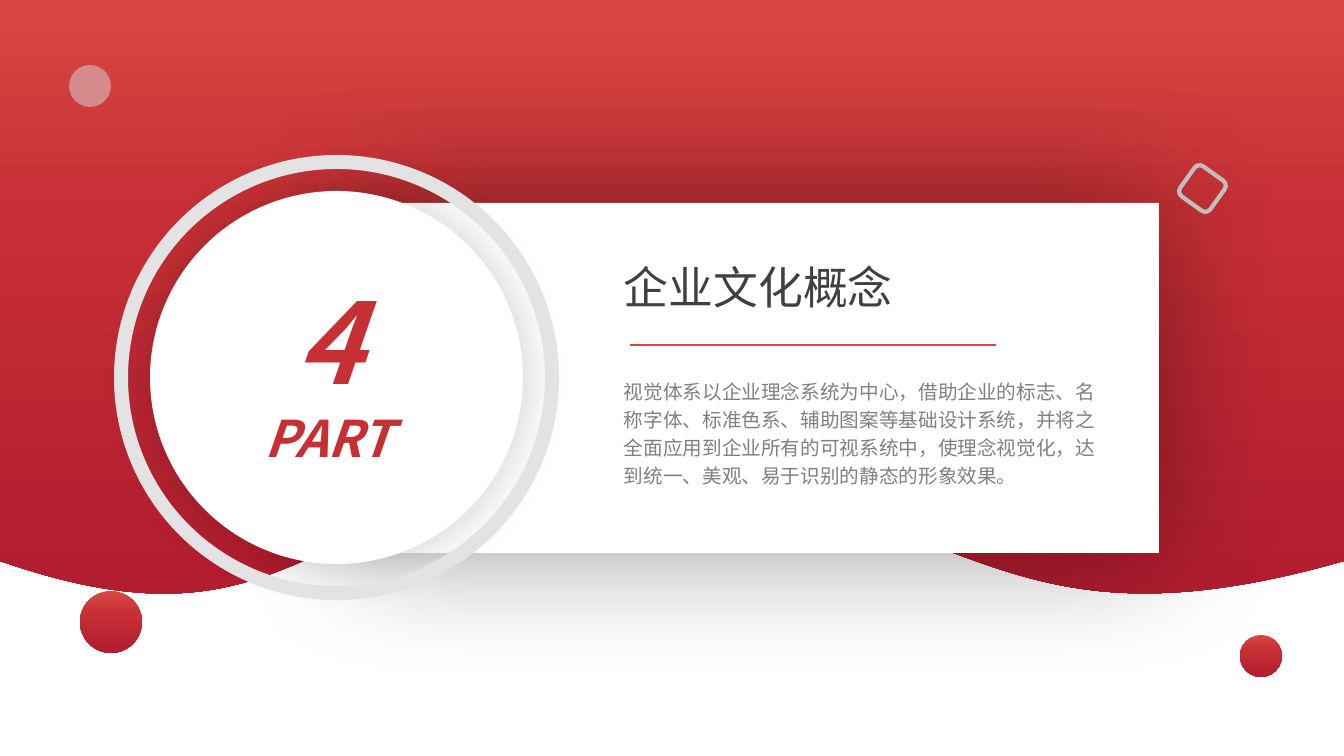
from dataclasses import dataclass

from lxml import etree
from pptx import Presentation, util as u
from pptx.dml.color import RGBColor
from pptx.enum import shapes, text
from pptx.oxml.ns import qn

SLIDE_W, SLIDE_H = 1344, 756
EMU_PER_PX = 12192000 / SLIDE_W


@dataclass(frozen=True)
class Theme:
    font: str = "Noto Sans CJK SC"
    white: str = "FFFFFF"
    ring: str = "E3E3E3"
    outline: str = "BFBFBF"
    dot: str = "D9D9D9"
    rule: str = "D84743"
    title: str = "404040"
    body: str = "808080"
    reds: tuple = ((0, "D84744"), (37, "C62F34"), (100, "B21D30"))
    number_size: int = 80
    part_size: int = 36
    title_size: int = 32
    body_size: int = 14


THEME = Theme()


def px(length):
    return u.Emu(round(length * EMU_PER_PX))


def node(parent, tag, **attrs):
    return etree.SubElement(parent, qn(tag), {k: str(v) for k, v in attrs.items()})


def paint_reds(fill, element):
    """Vertical red gradient for a shape or a run of text."""
    fill.gradient()
    fill.gradient_angle = 270
    stops = next(element.iter(qn("a:gsLst")))
    stops.clear()
    for percent, color in THEME.reds:
        node(node(stops, "a:gs", pos=percent * 1000), "a:srgbClr", val=color)


def paint(shape, fill=None, line=None, width=0, alpha=None, shadow=None):
    """Fill is a colour, the theme's gradient stops or None; shadow is (opacity, blur pt)."""
    shape.shadow.inherit = False
    if fill is THEME.reds:
        paint_reds(shape.fill, shape._element.spPr)
    elif fill:
        shape.fill.solid()
        shape.fill.fore_color.rgb = RGBColor.from_string(fill)
    else:
        shape.fill.background()
    if alpha:
        color = next(shape._element.spPr.iter(qn("a:srgbClr")))
        node(color, "a:alpha", val=alpha * 1000)
    if line:
        shape.line.color.rgb = RGBColor.from_string(line)
        shape.line.width = u.Pt(width)
    else:
        shape.line.fill.background()
    if shadow:
        opacity, blur = shadow
        effects = shape._element.spPr.find(qn("a:effectLst"))
        outer = node(effects, "a:outerShdw", blurRad=u.Pt(blur), dist=0,
                     algn="ctr", rotWithShape=0)
        node(node(outer, "a:srgbClr", val="000000"), "a:alpha", val=opacity * 1000)


def add_figure(parent, kind, box, **look):
    figure = parent.add_shape(kind, *map(px, box))
    paint(figure, **look)
    return figure


def add_copy(parent, box, lines, color, wrap=True, paragraph_format=None, **font_format):
    """Lines are (wording, size) pairs, one paragraph each."""
    frame = parent.add_textbox(*map(px, box)).text_frame
    frame.word_wrap = wrap
    frame.auto_size = text.MSO_AUTO_SIZE.SHAPE_TO_FIT_TEXT
    for index, (wording, size) in enumerate(lines):
        paragraph = frame.add_paragraph() if index else frame.paragraphs[0]
        for key, value in (paragraph_format or {}).items():
            setattr(paragraph, key, value)
        run = paragraph.add_run()
        run.text = wording
        for key, value in {"name": THEME.font, "size": u.Pt(size), **font_format}.items():
            setattr(run.font, key, value)
        node(run._r.rPr, "a:ea", typeface=THEME.font)
        if color is THEME.reds:
            paint_reds(run.font.fill, run._r)
        else:
            run.font.color.rgb = RGBColor.from_string(color)


def bezier(start, control_1, control_2, end, steps=60):
    for step in range(1, steps + 1):
        t = step / steps
        weights = ((1 - t) ** 3, 3 * t * (1 - t) ** 2, 3 * t * t * (1 - t), t ** 3)
        points = (start, control_1, control_2, end)
        yield tuple(sum(w * p[axis] for w, p in zip(weights, points)) for axis in (0, 1))


def add_wave(parent, box):
    left, top, width, _ = box
    right_edge, crest, crest_left, left_edge = (width, 561), (605, 482), (578, 483), (0, 561)
    outline = [(width, 0), right_edge,
               *bezier(right_edge, (975, 666), (975, 482), crest), crest_left,
               *bezier(crest_left, (302, 494), (293, 663), left_edge)]
    builder = parent.build_freeform(px(left), px(top), scale=1.0)
    builder.add_line_segments([(px(left + x), px(top + y)) for x, y in outline], close=True)
    paint(builder.convert_to_shape(), fill=THEME.reds)


def add_ornaments(parent, box):
    left, top, _, _ = box
    oval = shapes.MSO_SHAPE.OVAL
    for x, y, size, look in ((80, 591, 62, {"fill": THEME.reds}),
                             (1240, 635, 42, {"fill": THEME.reds}),
                             (69, 65, 42, {"fill": THEME.dot, "alpha": 50})):
        add_figure(parent, oval, (left + x, top + y, size, size), **look)
    diamond = add_figure(parent, shapes.MSO_SHAPE.ROUNDED_RECTANGLE,
                         (left + 1184, top + 170, 37, 37), line=THEME.outline, width=3)
    diamond.rotation = 305.6


def add_badge(parent, box):
    left, top, size, _ = box
    badge = parent.add_group_shape().shapes
    oval = shapes.MSO_SHAPE.OVAL
    inset = 29
    disc = size - 2 * inset
    add_figure(badge, oval, (left + inset, top + inset, disc, disc),
               fill=THEME.white, shadow=(20, 35))
    add_figure(badge, oval, box, line=THEME.ring, width=10)
    add_copy(parent, (left + 112, top + 106, 191, 207),
             (("4", THEME.number_size), ("PART", THEME.part_size)), THEME.reds,
             paragraph_format={"alignment": text.PP_ALIGN.CENTER}, bold=True, italic=True)


def add_card_copy(parent, box):
    left, top, _, _ = box
    margin = left + 252
    # Heading
    add_copy(parent, (margin, top + 52, 291, 65),
             (("企业文化概念", THEME.title_size),), THEME.title, wrap=False)
    # Description
    add_copy(parent, (margin, top + 167, 498, 121),
             (("视觉体系以企业理念系统为中心，借助企业的标志、名称字体、标准色系、"
               "辅助图案等基础设计系统，并将之全面应用到企业所有的可视系统中，"
               "使理念视觉化，达到统一、美观、易于识别的静态的形象效果。",
               THEME.body_size),), THEME.body,
             paragraph_format={"line_spacing": u.Pt(20)})
    # Rule under the heading
    rule_y = px(top + 142)
    rule = parent.add_connector(shapes.MSO_CONNECTOR.STRAIGHT,
                                px(margin + 16), rule_y, px(margin + 382), rule_y)
    rule.line.color.rgb = RGBColor.from_string(THEME.rule)
    rule.line.width = u.Pt(1)
    node(rule._element.spPr, "a:effectLst")


def add_section_slide(deck):
    parent = deck.slides.add_slide(deck.slide_layouts[6]).shapes
    page = (0, 0, SLIDE_W, SLIDE_H)
    card = (362, 203, 797, 350)
    # Backdrop and card
    add_wave(parent, page)
    add_figure(parent, shapes.MSO_SHAPE.RECTANGLE, card, fill=THEME.white, shadow=(40, 98))
    # Floating ornaments
    add_ornaments(parent, page)
    # Section number and its text
    add_badge(parent, (121, 162, 431, 431))
    add_card_copy(parent, card)


def main():
    deck = Presentation()
    deck.slide_width, deck.slide_height = px(SLIDE_W), px(SLIDE_H)
    add_section_slide(deck)
    deck.save("out.pptx")


if __name__ == "__main__":
    main()
